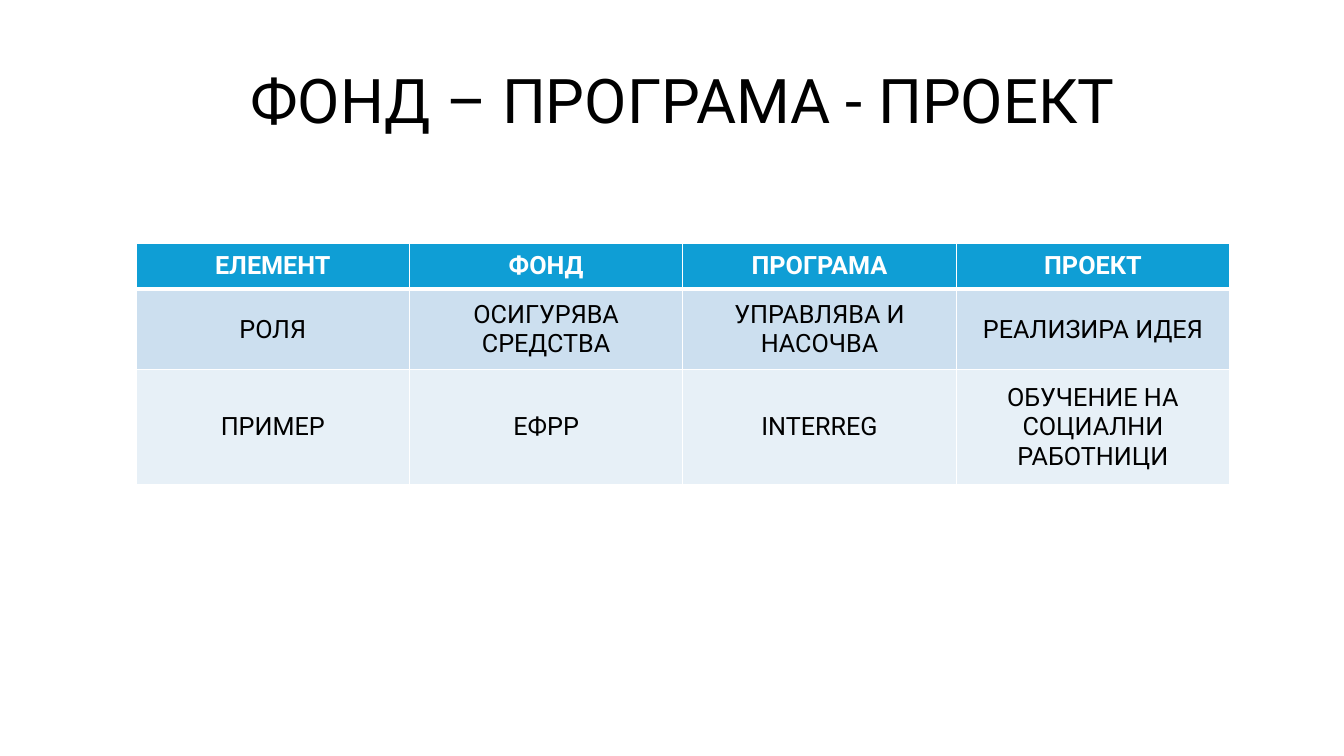
from lxml import etree
from pptx import Presentation
from pptx.dml.color import RGBColor
from pptx.enum.text import MSO_ANCHOR, PP_ALIGN
from pptx.oxml.ns import qn
from pptx.util import Pt

CENTER = PP_ALIGN.CENTER
MIDDLE = MSO_ANCHOR.MIDDLE

# Content
TITLE = "ФОНД – ПРОГРАМА - ПРОЕКТ"
ROWS = [
    ("ЕЛЕМЕНТ", "ФОНД", "ПРОГРАМА", "ПРОЕКТ"),
    ("РОЛЯ", "ОСИГУРЯВА СРЕДСТВА", "УПРАВЛЯВА И НАСОЧВА", "РЕАЛИЗИРА ИДЕЯ"),
    ("ПРИМЕР", "ЕФРР", "INTERREG", "ОБУЧЕНИЕ НА СОЦИАЛНИ РАБОТНИЦИ"),
]

# Style and layout, lengths in points
FONT = "Roboto"
COLORS = {"text": "000000", "white": "FFFFFF", "header": "0F9ED5",
          "role": "CCDFEF", "example": "E7F0F7"}
ROW_FILLS = ("header", "role", "example")
ROW_HEIGHTS = (33, 57.5, 82)
TABLE_LEFT, TABLE_TOP = 97.2, 173.6
COLUMN_WIDTH = 195.3
THIN, THICK = 1, 3


def write_text(text_frame, text, size, color="text", bold=False, line_spacing=1.0):
    paragraph = text_frame.paragraphs[0]
    paragraph.text = text
    paragraph.alignment = CENTER
    paragraph.line_spacing = line_spacing
    font = paragraph.runs[0].font
    font.name, font.size, font.bold = FONT, Pt(size), bold
    font.color.rgb = RGBColor.from_string(COLORS[color])


def set_borders(cell, top, bottom):
    properties = cell._tc.get_or_add_tcPr()
    widths = {"a:lnL": THIN, "a:lnR": THIN, "a:lnT": top, "a:lnB": bottom}
    for position, (tag, width) in enumerate(widths.items()):
        line = etree.Element(qn(tag), w=str(Pt(width)))
        fill = etree.SubElement(line, qn("a:solidFill"))
        etree.SubElement(fill, qn("a:srgbClr"), val=COLORS["white"])
        properties.insert(position, line)


def main():
    presentation = Presentation()
    presentation.slide_width, presentation.slide_height = Pt(960), Pt(540)
    slide = presentation.slides.add_slide(presentation.slide_layouts[5])

    # Title
    title = slide.shapes.title
    title.left, title.top, title.width, title.height = Pt(92), Pt(16.5), Pt(792), Pt(114.5)
    title.text_frame.vertical_anchor = MIDDLE
    write_text(title.text_frame, TITLE, 44, line_spacing=0.9)

    # Table
    column_count = len(ROWS[0])
    table = slide.shapes.add_table(
        len(ROWS), column_count, Pt(TABLE_LEFT), Pt(TABLE_TOP),
        Pt(COLUMN_WIDTH * column_count), Pt(sum(ROW_HEIGHTS))).table
    for column in table.columns:
        column.width = Pt(COLUMN_WIDTH)
    for row_index, texts in enumerate(ROWS):
        table.rows[row_index].height = Pt(ROW_HEIGHTS[row_index])
        is_header = row_index == 0
        for column_index, text in enumerate(texts):
            cell = table.cell(row_index, column_index)
            cell.vertical_anchor = MIDDLE
            cell.fill.solid()
            cell.fill.fore_color.rgb = RGBColor.from_string(COLORS[ROW_FILLS[row_index]])
            write_text(cell.text_frame, text, 18,
                       color="white" if is_header else "text", bold=is_header)
            set_borders(cell, top=THICK if row_index == 1 else THIN,
                        bottom=THICK if is_header else THIN)

    presentation.save("out.pptx")


if __name__ == "__main__":
    main()
